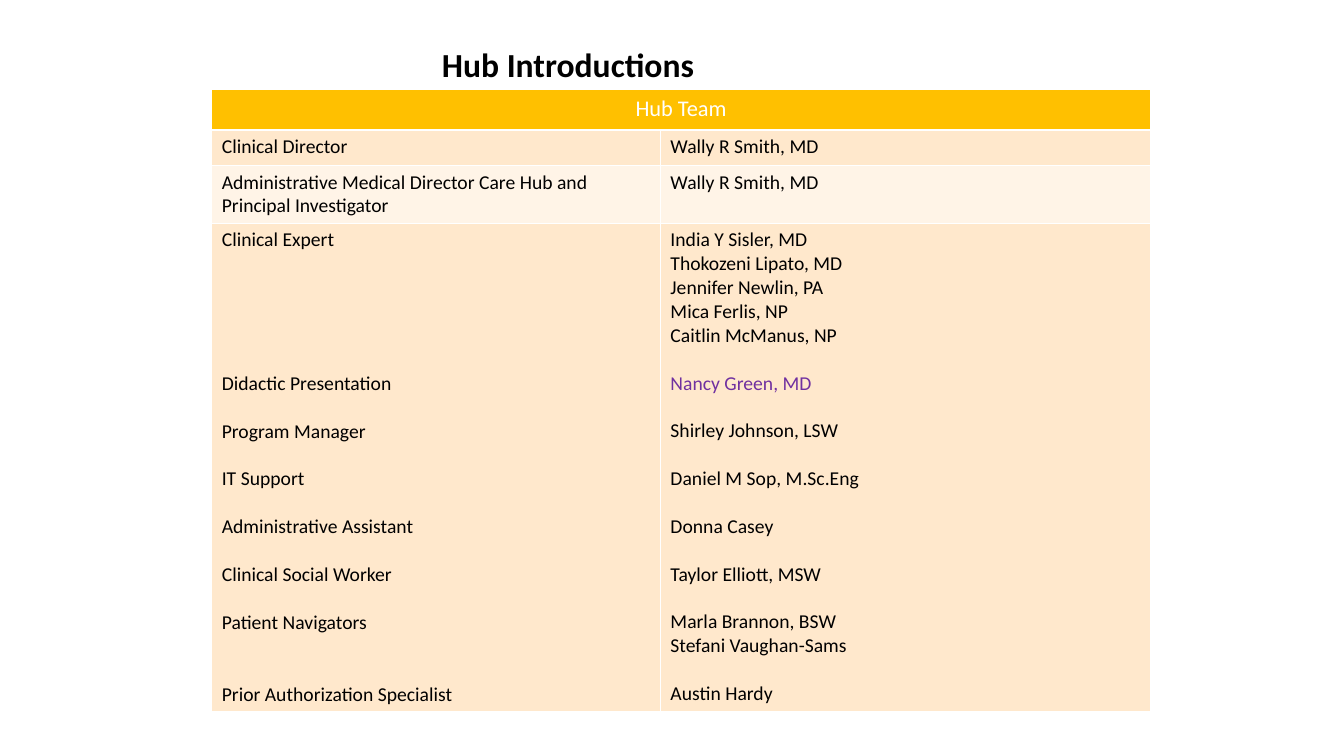
import pptx
import pptx.util
import pptx.dml.color
import pptx.enum.text
import pptx.oxml
import pptx.oxml.ns
from pptx.util import Inches

theme = {
    "font": "Calibri",
    "title_size": 24, "header_size": 16, "body_size": 14,
    "line_height": 17.1,
    "black": "000000", "white": "FFFFFF", "guest": "7030A0",
    "gold": "FFC000", "band_dark": "FFE8CC", "band_light": "FFF4E7",
}


def style(paragraph, size, color, bold=False):
    for run in paragraph.runs:
        run.font.name = theme["font"]
        run.font.size = pptx.util.Pt(size)
        run.font.bold = bold
        run.font.color.rgb = pptx.dml.color.RGBColor.from_string(color)


def paint_cell(cell, fill):
    properties = cell._tc.get_or_add_tcPr()
    for side in "LRTB":
        properties.append(pptx.oxml.parse_xml(
            f'<a:ln{side} {pptx.oxml.ns.nsdecls("a")} w="{pptx.util.Pt(1)}">'
            f'<a:solidFill><a:srgbClr val="{theme["white"]}"/></a:solidFill></a:ln{side}>'))
    cell.fill.solid()
    cell.fill.fore_color.rgb = pptx.dml.color.RGBColor.from_string(fill)


presentation = pptx.Presentation()
presentation.slide_width = Inches(13.33)
presentation.slide_height = Inches(7.5)
slide = presentation.slides.add_slide(presentation.slide_layouts[6])

# Team table: each row holds groups of a role and its people
team_rows = [
    [("Clinical Director", ["Wally R Smith, MD"])],
    [("Administrative Medical Director Care Hub and Principal Investigator",
      ["Wally R Smith, MD"])],
    [
        ("Clinical Expert", ["India Y Sisler, MD", "Thokozeni Lipato, MD",
                             "Jennifer Newlin, PA", "Mica Ferlis, NP",
                             "Caitlin McManus, NP"]),
        ("Didactic Presentation", ["Nancy Green, MD"]),
        ("Program Manager", ["Shirley Johnson, LSW"]),
        ("IT Support", ["Daniel M Sop, M.Sc.Eng"]),
        ("Administrative Assistant", ["Donna Casey"]),
        ("Clinical Social Worker", ["Taylor Elliott, MSW"]),
        ("Patient Navigators", ["Marla Brannon, BSW", "Stefani Vaughan-Sams"]),
        ("Prior Authorization Specialist", ["Austin Hardy"]),
    ],
]
column_widths = [4.45, 4.86]
row_heights = [0.4, 0.35, 0.57, 4.83]
table = slide.shapes.add_table(
    len(row_heights), len(column_widths), Inches(2.1), Inches(0.89),
    Inches(sum(column_widths)), Inches(sum(row_heights))).table
for column, width in zip(table.columns, column_widths):
    column.width = Inches(width)
for row, height in zip(table.rows, row_heights):
    row.height = Inches(height)

# Header across both columns
header = table.cell(0, 0)
header.merge(table.cell(0, 1))
for cell in table.rows[0].cells:
    paint_cell(cell, theme["gold"])
header.text_frame.text = "Hub Team"
header_paragraph = header.text_frame.paragraphs[0]
header_paragraph.alignment = pptx.enum.text.PP_ALIGN.CENTER
style(header_paragraph, theme["header_size"], theme["white"])

# Body: spacing keeps every role level with the first of its people
for row_index, groups in enumerate(team_rows, start=1):
    role_lines, people_lines = [], []
    role_gap = people_gap = 0
    for role, people in groups:
        role_lines.append((role, role_gap))
        for position, person in enumerate(people):
            people_lines.append((person, people_gap if position == 0 else 0))
        role_gap, people_gap = len(people), 1

    fill = theme["band_dark"] if row_index % 2 else theme["band_light"]
    for column_index, lines in enumerate((role_lines, people_lines)):
        cell = table.cell(row_index, column_index)
        paint_cell(cell, fill)
        cell.text_frame.text = "\n".join(text for text, gap in lines)
        for paragraph, (text, gap) in zip(cell.text_frame.paragraphs, lines):
            paragraph.space_before = pptx.util.Pt(gap * theme["line_height"])
            color = theme["guest"] if text == "Nancy Green, MD" else theme["black"]
            style(paragraph, theme["body_size"], color)

# Title
title = slide.shapes.add_textbox(Inches(4.21), Inches(0.39), Inches(2.81), Inches(0.5))
title.text_frame.word_wrap = True
title.text_frame.auto_size = pptx.enum.text.MSO_AUTO_SIZE.SHAPE_TO_FIT_TEXT
title.text_frame.text = " Hub Introductions"
style(title.text_frame.paragraphs[0], theme["title_size"], theme["black"], bold=True)

presentation.save("out.pptx")
